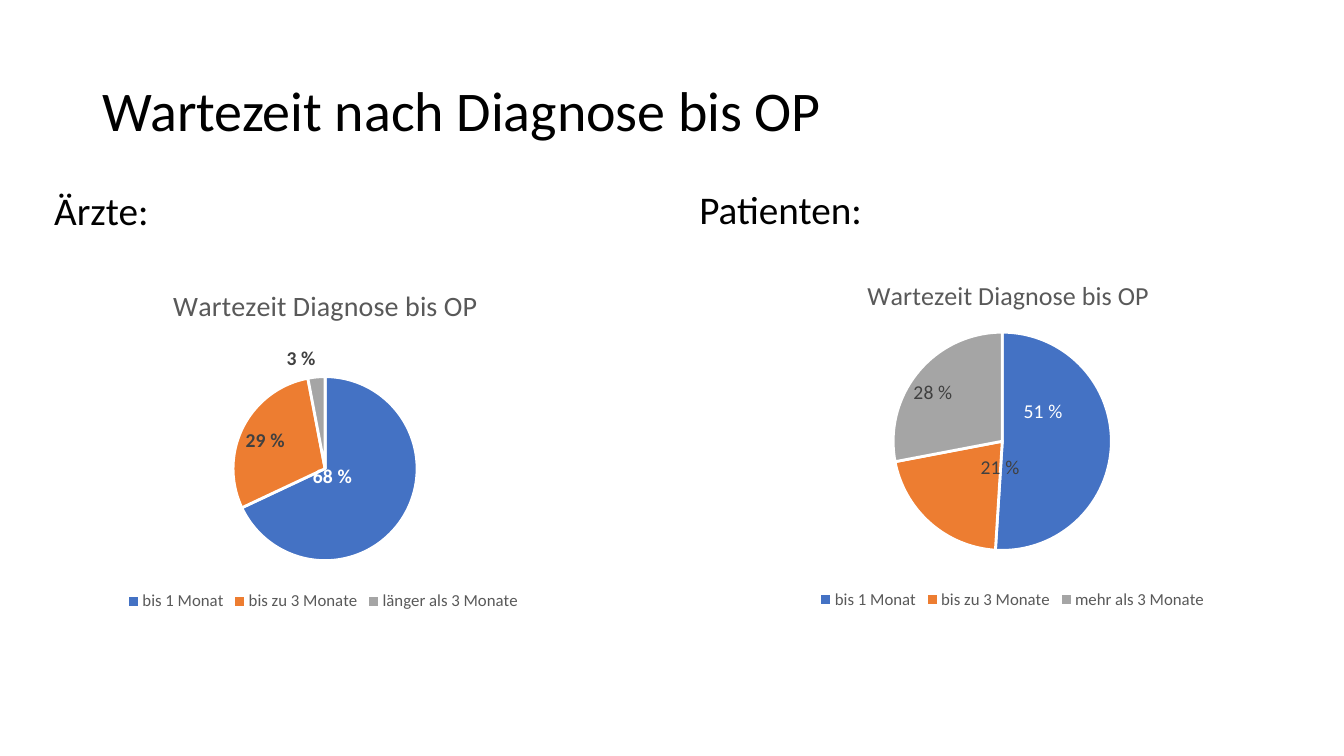
from lxml import etree
from pptx import Presentation
from pptx.chart.data import CategoryChartData
from pptx.dml.color import RGBColor
from pptx.enum.chart import XL_CHART_TYPE, XL_LABEL_POSITION, XL_LEGEND_POSITION
from pptx.enum.text import MSO_ANCHOR, MSO_AUTO_SIZE, PP_ALIGN
from pptx.oxml.ns import qn
from pptx.util import Pt

PIE = XL_CHART_TYPE.PIE
BOTTOM = XL_LEGEND_POSITION.BOTTOM
CENTER, OUTSIDE = XL_LABEL_POSITION.CENTER, XL_LABEL_POSITION.OUTSIDE_END
LEFT, MIDDLE, NO_FIT = PP_ALIGN.LEFT, MSO_ANCHOR.MIDDLE, MSO_AUTO_SIZE.NONE
FONT = "Calibri"
COLORS = {"black": "000000", "white": "FFFFFF", "grey": "595959", "dark": "404040"}
SLICES = {"blue": "4472C4", "orange": "ED7D31", "silver": "A5A5A5"}
CHART_TITLE = "Wartezeit Diagnose bis OP"

DOCTORS = {
    "frame": (8, 196, 448.5, 243.5),
    "answers": [("bis 1 Monat", 68), ("bis zu 3 Monate", 29), ("länger als 3 Monate ", 3)],
    "labels": [("68 %", CENTER, (-0.05, -0.05)), ("29 %", CENTER, (-0.03, -0.02)),
               ("3 %", OUTSIDE, (0, 0))],
    "bold": True,
    "title": (20, 0.25, 0.02),
    "pie": (0.35, 0.3, 0.3, 0.54),
}
PATIENTS = {
    "frame": (480, 187, 486.5, 251.5),
    "answers": [("bis 1 Monat", 51), ("bis zu 3 Monate", 21), ("mehr als 3 Monate", 28)],
    "labels": [("51 %", CENTER, (-0.02, -0.09)), ("21 %", CENTER, (0.05, -0.04)),
               ("28 %", CENTER, (-0.04, -0.04))],
    "bold": False,
    "title": (18.6, 0.28, 0.03),
    "pie": (0.32, 0.2, 0.33, 0.62),
}


def set_font(font, size, color, bold=False):
    """Format a font."""
    font.name, font.size, font.bold = FONT, Pt(size), bold
    font.color.rgb = RGBColor.from_string(color)


def place(shape, left, top, width, height):
    """Move and resize a shape, in points."""
    shape.left, shape.top = Pt(left), Pt(top)
    shape.width, shape.height = Pt(width), Pt(height)


def write_line(shape, text, size, space_before=0):
    """Write one left-aligned line without a bullet."""
    frame = shape.text_frame
    frame.word_wrap, frame.auto_size = True, NO_FIT
    frame.text = text
    para = frame.paragraphs[0]
    para.alignment, para.line_spacing = LEFT, 0.9
    para.space_before = Pt(space_before)
    set_font(para.font, size, COLORS["black"])
    properties = para._p.get_or_add_pPr()
    properties.set("marL", "0")
    properties.set("indent", "0")
    etree.SubElement(properties, qn("a:buNone"))


def set_layout(parent, after, **settings):
    """Give a chart part a manual layout behind the named child, or first."""
    for old in parent.findall(qn("c:layout")):
        parent.remove(old)
    layout = etree.Element(qn("c:layout"))
    manual = etree.SubElement(layout, qn("c:manualLayout"))
    for name, value in settings.items():
        etree.SubElement(manual, qn(f"c:{name}")).set("val", str(value))
    previous = parent.find(qn(after)) if after else None
    parent.insert(0 if previous is None else parent.index(previous) + 1, layout)


def style_slices(series, survey):
    """Colour the slices and write their labels."""
    for index, (color, label) in enumerate(zip(SLICES.values(), survey["labels"])):
        text, position, _ = label
        point = series.points[index]
        point.format.fill.solid()
        point.format.fill.fore_color.rgb = RGBColor.from_string(color)
        point.format.line.width = Pt(2)
        point.format.line.color.rgb = RGBColor.from_string(COLORS["white"])
        frame = point.data_label.text_frame
        frame.text = text
        span = frame.paragraphs[0].runs[0]
        set_font(span.font, 14, COLORS["dark" if index else "white"], survey["bold"])
        point.data_label.position = position


def add_pie(page, survey):
    """Add the pie chart of one survey group."""
    data = CategoryChartData()
    data.categories = [name for name, _ in survey["answers"]]
    data.add_series("Series 1", [value for _, value in survey["answers"]])
    lengths = [Pt(length) for length in survey["frame"]]
    chart = page.shapes.add_chart(PIE, *lengths, data).chart
    set_font(chart.font, 10, COLORS["black"])
    chart.plots[0].vary_by_categories = True

    size, left, top = survey["title"]
    title = chart.chart_title.text_frame
    title.text = CHART_TITLE
    set_font(title.paragraphs[0].font, size, COLORS["grey"])
    chart.chart_title.include_in_layout = False

    chart.has_legend = True
    chart.legend.position = BOTTOM
    chart.legend.include_in_layout = False
    set_font(chart.legend.font, 12, COLORS["grey"])

    style_slices(chart.plots[0].series[0], survey)
    root = chart.element
    set_layout(next(root.iter(qn("c:title"))), "c:tx",
               xMode="edge", yMode="edge", x=left, y=top)
    x, y, width, height = survey["pie"]
    set_layout(next(root.iter(qn("c:plotArea"))), None, layoutTarget="inner",
               xMode="edge", yMode="edge", x=x, y=y, w=width, h=height)
    for label, (_, _, (right, down)) in zip(root.iter(qn("c:dLbl")), survey["labels"]):
        set_layout(label, "c:idx", x=right, y=down)


def main():
    """Build the slide and save it."""
    deck = Presentation()
    deck.slide_width, deck.slide_height = Pt(960), Pt(540)
    page = deck.slides.add_slide(deck.slide_layouts[1])
    title, doctors = page.placeholders
    place(title, 66, 29, 828, 104.5)
    write_line(title, "Wartezeit nach Diagnose bis OP", 40)
    title.text_frame.vertical_anchor = MIDDLE
    place(doctors, 31.5, 133, 448.5, 104.5)
    write_line(doctors, "Ärzte:", 28, 10)
    add_pie(page, DOCTORS)
    patients = page.shapes.add_textbox(Pt(492.5), Pt(132.5), Pt(448.5), Pt(104.5))
    write_line(patients, "Patienten:", 28, 10)
    add_pie(page, PATIENTS)
    deck.save("out.pptx")


if __name__ == "__main__":
    main()
